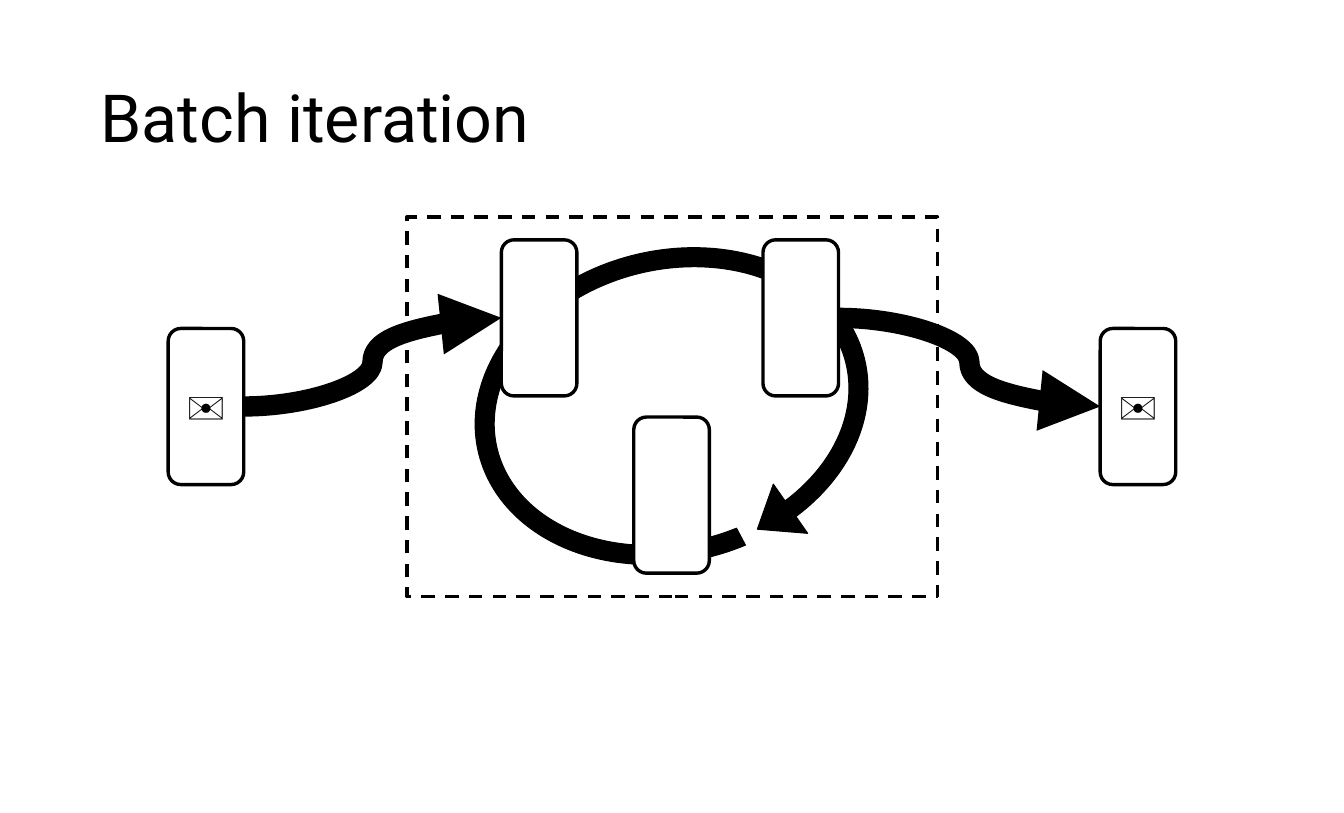
from lxml.etree import SubElement
from pptx import Presentation
from pptx.dml.color import RGBColor
from pptx.enum.dml import MSO_LINE
from pptx.enum.shapes import MSO_CONNECTOR, MSO_SHAPE
from pptx.enum.text import MSO_ANCHOR, MSO_AUTO_SIZE, PP_ALIGN
from pptx.oxml.ns import qn
from pptx.util import Inches, Pt

BLACK, WHITE = "000000", "FFFFFF"
FONT = "Roboto"
STAGE_W, STAGE_H = 0.93, 1.92
LEFT, RIGHT = 1, 3


def color(value):
    return RGBColor.from_string(value)


def style_font(paragraph, size, bold=False):
    paragraph.font.name = FONT
    paragraph.font.size = Pt(size)
    paragraph.font.bold = bold
    paragraph.font.color.rgb = color(BLACK)


def add_outline(slide, kind, box, fill=None, line_width=3):
    shape = slide.shapes.add_shape(kind, *map(Inches, box))
    shape.shadow.inherit = False
    if fill:
        shape.fill.solid()
        shape.fill.fore_color.rgb = color(fill)
    else:
        shape.fill.background()
    shape.line.color.rgb = color(BLACK)
    shape.line.width = Pt(line_width)
    return shape


def add_stage(slide, left, top):
    box = (left, top, STAGE_W, STAGE_H)
    return add_outline(slide, MSO_SHAPE.ROUNDED_RECTANGLE, box, WHITE)


def add_envelope(slide, left, top):
    width, height = 1.13, 0.91
    box = (left + (STAGE_W - width) / 2, top + (STAGE_H - height) / 2, width, height)
    frame = slide.shapes.add_textbox(*map(Inches, box)).text_frame
    frame.word_wrap = True
    frame.auto_size = MSO_AUTO_SIZE.SHAPE_TO_FIT_TEXT
    envelope = frame.paragraphs[0]
    envelope.text = "✉"
    envelope.alignment = PP_ALIGN.CENTER
    style_font(envelope, 48, bold=True)


def add_flow(slide, source, target):
    flow = slide.shapes.add_connector(MSO_CONNECTOR.CURVE, 0, 0, 0, 0)
    flow.begin_connect(source, RIGHT)
    flow.end_connect(target, LEFT)
    flow.line.color.rgb = color(BLACK)
    flow.line.width = Pt(18)
    SubElement(flow.line._get_or_add_ln(), qn("a:tailEnd"), type="triangle")
    SubElement(flow._element.spPr, qn("a:effectLst"))
    slide.shapes._spTree.remove(flow._element)
    slide.shapes._spTree.insert_element_before(flow._element, "p:extLst")
    return flow


def add_title(slide, box):
    title = slide.shapes.title
    title.left, title.top, title.width, title.height = map(Inches, box)
    title.text_frame.vertical_anchor = MSO_ANCHOR.MIDDLE
    heading = title.text_frame.paragraphs[0]
    heading.text = "Batch iteration"
    heading.alignment = PP_ALIGN.LEFT
    heading.line_spacing = 0.9
    style_font(heading, 58.7)


def add_loop(slide, left, top, width, height):
    box = (left + 0.56, top + 0.16, 5.39, 4.33)
    cycle = add_outline(slide, MSO_SHAPE.CIRCULAR_ARROW, box, BLACK, 1)
    cycle.rotation = 346.2
    for index, value in enumerate((0.054, 8.578, 32.76, 45.488, 0.085)):
        cycle.adjustments[index] = value
    offsets = ((1.16, 0.28), (4.38, 0.28), (2.79, 2.46))
    first, last, _ = [add_stage(slide, left + x, top + y) for x, y in offsets]
    border = add_outline(slide, MSO_SHAPE.RECTANGLE, (left, top, width, height))
    border.line.dash_style = MSO_LINE.DASH
    return first, last


def add_endpoint(slide, left, top):
    stage = add_stage(slide, left, top)
    add_envelope(slide, left, top)
    return stage


def main():
    deck = Presentation()
    deck.slide_width, deck.slide_height = Inches(16.54), Inches(10)
    slide = deck.slides.add_slide(deck.slide_layouts[5])
    add_title(slide, (1.14, 0.53, 14.26, 1.93))
    loop_entry, loop_exit = add_loop(slide, 5.01, 2.67, 6.53, 4.67)
    inbox, outbox = [add_endpoint(slide, left, 4.04) for left in (2.07, 13.54)]
    add_flow(slide, inbox, loop_entry)
    add_flow(slide, loop_exit, outbox)
    deck.save("out.pptx")


if __name__ == "__main__":
    main()
